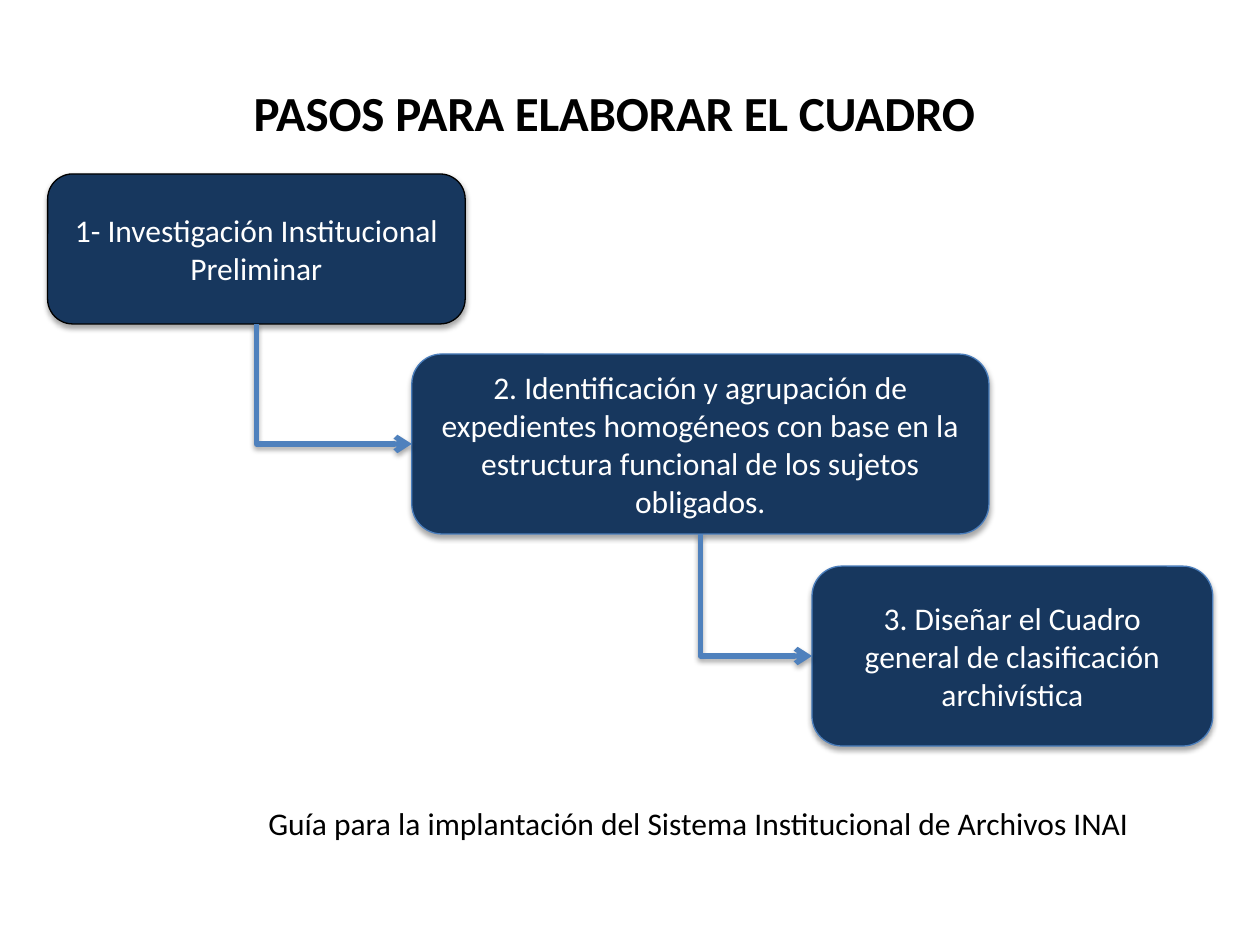
from pptx import Presentation
from pptx.dml.color import RGBColor
from pptx.enum.shapes import MSO_CONNECTOR, MSO_SHAPE
from pptx.enum.text import MSO_ANCHOR, PP_ALIGN
from pptx.oxml import parse_xml
from pptx.oxml.ns import nsdecls
from pptx.util import Pt

ROUNDED = MSO_SHAPE.ROUNDED_RECTANGLE
ELBOW = MSO_CONNECTOR.ELBOW
CENTER, LEFT = PP_ALIGN.CENTER, PP_ALIGN.LEFT
MIDDLE = MSO_ANCHOR.MIDDLE
BOTTOM_SIDE, LEFT_SIDE = 2, 1
TITLE_ONLY = 5

THEME = {
    "font": "Calibri",
    "title_size": Pt(28),
    "body_size": Pt(18),
    "ink": RGBColor.from_string("000000"),
    "box": RGBColor.from_string("17375E"),
    "box_text": RGBColor.from_string("FFFFFF"),
    "box_edge": RGBColor.from_string("4B7EBC"),
    "arrow": RGBColor.from_string("4F81BD"),
}


def write(frame, text, size, color, align, bold=False):
    paragraph = frame.paragraphs[0]
    paragraph.alignment = align
    run = paragraph.add_run()
    run.text = text
    for key, value in {"name": THEME["font"], "size": size, "bold": bold}.items():
        setattr(run.font, key, value)
    run.font.color.rgb = color
    return run


def add_soft_shadow(properties):
    properties.append(parse_xml(
        f'<a:effectLst {nsdecls("a")}>'
        f'<a:outerShdw blurRad="{Pt(3.1)}" dist="{Pt(1.8)}" dir="5400000" rotWithShape="0">'
        '<a:srgbClr val="000000"><a:alpha val="35000"/></a:srgbClr>'
        '</a:outerShdw></a:effectLst>'))


deck = Presentation()
deck.slide_width, deck.slide_height = Pt(720), Pt(540)
slide = deck.slides.add_slide(deck.slide_layouts[TITLE_ONLY])

title = slide.shapes.title
title_place = {"left": Pt(101.5), "top": Pt(46), "width": Pt(499), "height": Pt(35.3)}
for key, value in title_place.items():
    setattr(title, key, value)
title_format = {"margin_left": 0, "margin_top": Pt(1), "margin_right": 0,
                "margin_bottom": 0, "vertical_anchor": MIDDLE, "word_wrap": True}
for key, value in title_format.items():
    setattr(title.text_frame, key, value)
heading = write(title.text_frame, "PASOS PARA ELABORAR EL CUADRO",
                THEME["title_size"], THEME["ink"], CENTER, bold=True)
heading.font._element.set("spc", "-10")

source_note = slide.shapes.add_textbox(Pt(146.2), Pt(456), Pt(507.6), Pt(29))
source_note.text_frame.word_wrap = False
write(source_note.text_frame,
      "Guía para la implantación del Sistema Institucional de Archivos INAI",
      THEME["body_size"], THEME["ink"], LEFT)

STEPS = [
    ("1- Investigación Institucional Preliminar",
     (27.2, 99.4, 238.6, 85.7), THEME["ink"]),
    ("2. Identificación y agrupación de expedientes homogéneos con base en la "
     "estructura funcional de los sujetos obligados.",
     (235.3, 202.3, 329.8, 102.8), THEME["box_edge"]),
    ("3. Diseñar el Cuadro general de clasificación archivística",
     (464, 323.5, 229, 102.8), THEME["box_edge"]),
]
steps = []
for text, place, edge in STEPS:
    step = slide.shapes.add_shape(ROUNDED, *map(Pt, place))
    step.fill.solid()
    step.fill.fore_color.rgb = THEME["box"]
    step.line.color.rgb = edge
    step.line.width = Pt(0.75)
    add_soft_shadow(step._element.spPr)
    step.text_frame.word_wrap = True
    step.text_frame.vertical_anchor = MIDDLE
    write(step.text_frame, text, THEME["body_size"], THEME["box_text"], CENTER)
    steps.append(step)

for current, following in zip(steps, steps[1:]):
    start_x, start_y = current.left + current.width // 2, current.top + current.height
    end_x, end_y = following.left, following.top + following.height // 2
    run_x, drop = end_x - start_x, end_y - start_y
    arrow = slide.shapes.add_connector(ELBOW, start_x, start_y, end_x, end_y)
    arrow.begin_connect(current, BOTTOM_SIDE)
    arrow.end_connect(following, LEFT_SIDE)

    # A one-bend elbow starts sideways; turned and flipped, it drops first.
    arrow_place = {"left": (start_x + end_x - drop) // 2,
                   "top": (start_y + end_y - run_x) // 2,
                   "width": drop, "height": run_x}
    for key, value in arrow_place.items():
        setattr(arrow, key, value)
    properties = arrow._element.spPr
    properties.prstGeom.set("prst", "bentConnector2")
    properties.xfrm.set("rot", "16200000")
    properties.xfrm.set("flipH", "1")

    arrow.line.color.rgb = THEME["arrow"]
    arrow.line.width = Pt(3)
    properties.ln.append(parse_xml(f'<a:tailEnd {nsdecls("a")} type="arrow"/>'))
    add_soft_shadow(properties)

deck.save("out.pptx")
